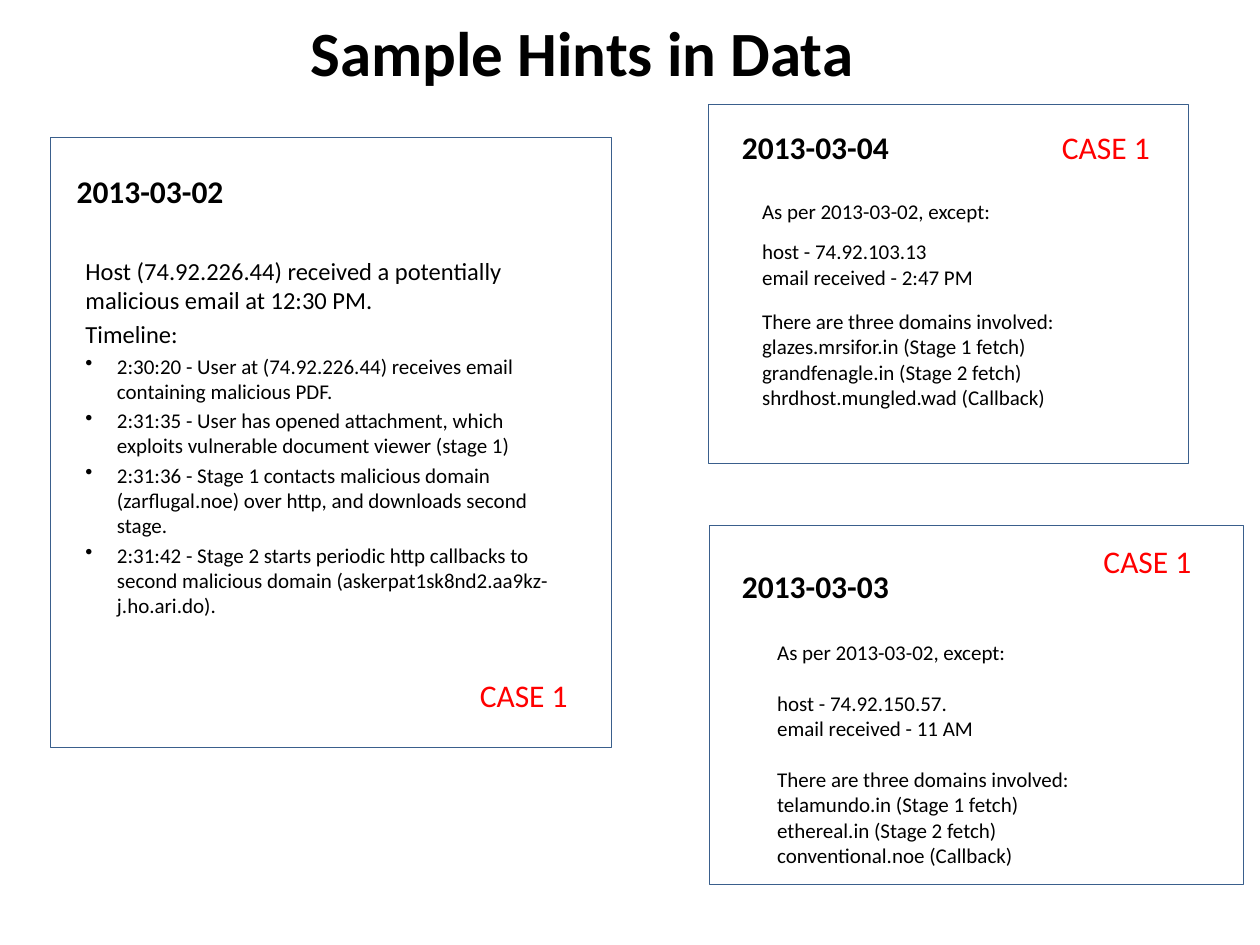
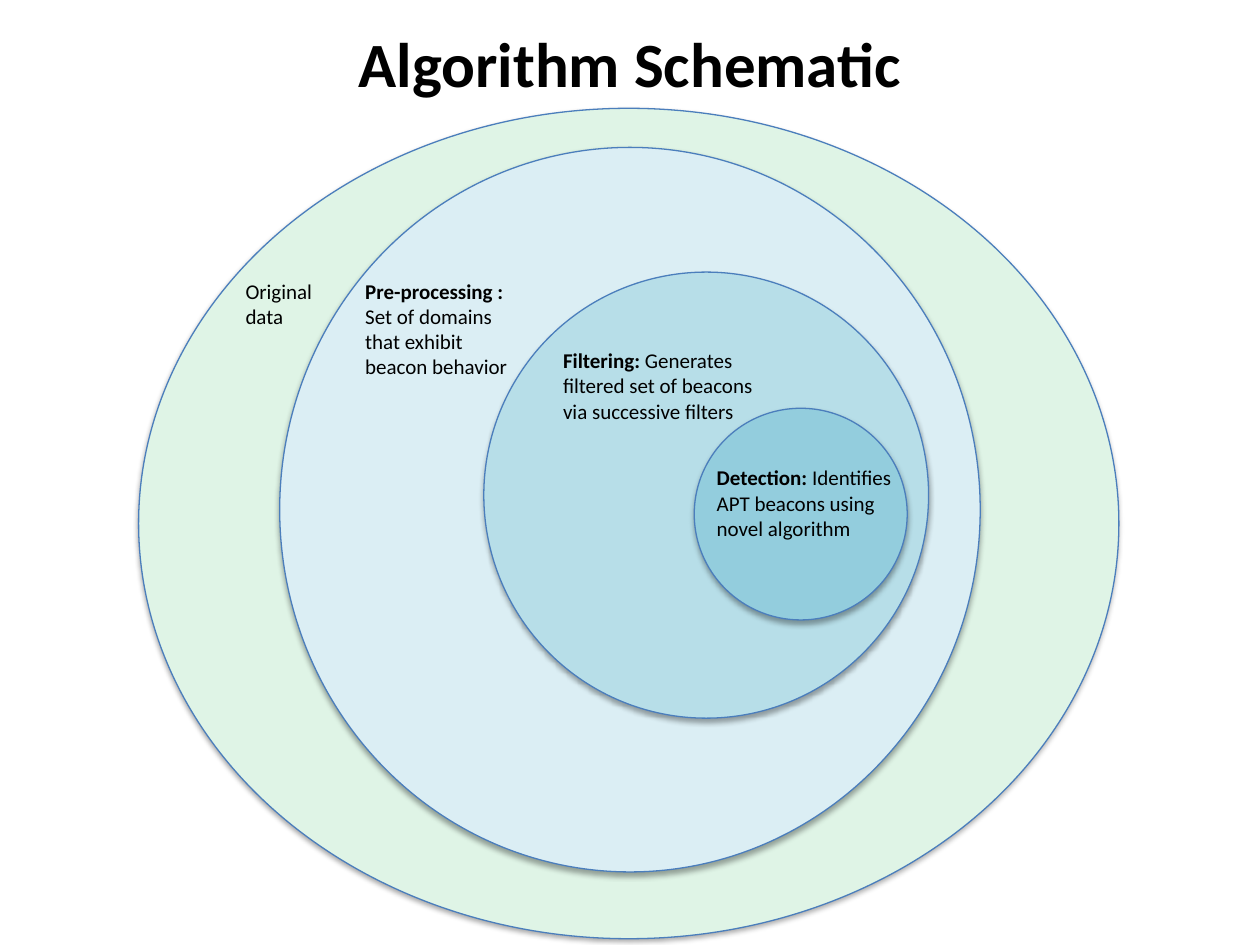
from dataclasses import dataclass

from lxml.etree import SubElement
from pptx import Presentation
from pptx.dml.color import RGBColor
from pptx.enum.shapes import MSO_SHAPE
from pptx.enum.text import MSO_ANCHOR, PP_ALIGN
from pptx.oxml.ns import qn
from pptx.util import Inches, Pt


@dataclass(frozen=True)
class Theme:
    font: str = "Calibri"
    text: RGBColor = RGBColor(0, 0, 0)
    case: RGBColor = RGBColor(255, 0, 0)
    card_line: RGBColor = RGBColor.from_string("3A5F8C")
    ring_line: RGBColor = RGBColor.from_string("4B7EBC")
    title_size: int = 36
    heading_size: int = 18
    lead_size: int = 14
    body_size: int = 12


theme = Theme()
presentation = Presentation()
presentation.slide_width = Inches(10)
presentation.slide_height = Inches(7.5)
column = presentation.slide_width / 100
row = presentation.slide_height / 75


def place(left, top, width, height):
    """Turn grid columns and rows into slide lengths."""
    return (round(left * column), round(top * row),
            round(width * column), round(height * row))


def write(text_frame, lines, size, color=theme.text, bold=False):
    text_frame.word_wrap = True
    text_frame.text = "\n".join(lines)
    for paragraph in text_frame.paragraphs:
        for run in paragraph.runs:
            run.font.name = theme.font
            run.font.size = Pt(size)
            run.font.bold = bold
            run.font.color.rgb = color
    return text_frame.paragraphs


# Titled slides
slides = []
for title_text, title_box in [
    ("Sample Hints in Data", (5.1, 0, 82.2, 8.1)),
    ("Algorithm Schematic", (5, 0.7, 90, 8.5)),
]:
    slide = presentation.slides.add_slide(presentation.slide_layouts[5])
    title = slide.shapes.title
    title.left, title.top, title.width, title.height = place(*title_box)
    title.text_frame.vertical_anchor = MSO_ANCHOR.MIDDLE
    paragraphs = write(title.text_frame, [title_text], theme.title_size, bold=True)
    paragraphs[0].alignment = PP_ALIGN.CENTER
    slides.append(slide)
hints, schematic = slides

# Case cards: date, frame, date corner, case label corner
cards = [
    ("2013-03-02", (4, 10.9, 44.5, 48.4), (5.1, 13.2), (37.1, 53.2)),
    ("2013-03-03", (56.3, 41.7, 42.4, 28.5), (57.9, 44.5), (86.6, 42.5)),
    ("2013-03-04", (56.2, 8.3, 38.1, 28.5), (57.9, 9.7), (83.3, 9.7)),
]
for date, frame_box, date_corner, case_corner in cards:
    frame = hints.shapes.add_shape(MSO_SHAPE.RECTANGLE, *place(*frame_box))
    frame.shadow.inherit = False
    frame.fill.background()
    frame.line.color.rgb = theme.card_line
    frame.line.width = Pt(0.25)
    date_label = hints.shapes.add_textbox(*place(*date_corner, 21.4, 4))
    write(date_label.text_frame, [date], theme.heading_size, bold=True)
    case_label = hints.shapes.add_textbox(*place(*case_corner, 10, 4))
    write(case_label.text_frame, ["CASE 1"], theme.heading_size, theme.case)

# Timeline of the first case
lead_lines = [
    "Host (74.92.226.44) received a potentially malicious email at 12:30 PM.",
    "Timeline:",
]
events = [
    "2:30:20 - User at (74.92.226.44) receives email containing malicious PDF.",
    "2:31:35 - User has opened attachment, which exploits vulnerable document viewer (stage 1)",
    "2:31:36 - Stage 1 contacts malicious domain (zarflugal.noe) over http, "
    "and downloads second stage.",
    "2:31:42 - Stage 2 starts periodic http callbacks to second malicious domain "
    "(askerpat1sk8nd2.aa9kz-j.ho.ari.do).",
]
timeline = hints.shapes.add_textbox(*place(5.8, 19.8, 39.5, 32.5))
paragraphs = write(timeline.text_frame, lead_lines + events, theme.lead_size)
for paragraph in paragraphs[1:]:
    paragraph.space_before = Pt(2.8)
for paragraph in paragraphs[len(lead_lines):]:
    paragraph.space_before = Pt(2.4)
    paragraph.runs[0].font.size = Pt(theme.body_size)
    properties = paragraph._p.get_or_add_pPr()
    properties.set("marL", str(Inches(0.25)))
    properties.set("indent", str(-Inches(0.25)))
    SubElement(properties, qn("a:buChar"), char="•")

# Differences in the later cases: box, gaps before host and domains, details
differences = [
    ((60.7, 50.3, 29.7, 19.2), (14.6, 14.6), "74.92.150.57.", "11 AM",
     ("telamundo.in", "ethereal.in", "conventional.noe")),
    ((59.5, 15.3, 26.9, 18.4), (8.5, 11), "74.92.103.13", "2:47 PM",
     ("glazes.mrsifor.in", "grandfenagle.in", "shrdhost.mungled.wad")),
]
roles = ("Stage 1 fetch", "Stage 2 fetch", "Callback")
for box, (host_gap, domains_gap), host, time, domains in differences:
    details = hints.shapes.add_textbox(*place(*box))
    paragraphs = write(details.text_frame, [
        "As per 2013-03-02, except:",
        f"host - {host}",
        f"email received - {time}",
        "There are three domains involved:",
        *(f"{domain} ({role})" for domain, role in zip(domains, roles)),
    ], theme.body_size)
    paragraphs[1].space_before = Pt(host_gap)
    paragraphs[3].space_before = Pt(domains_gap)

# Nested sets, from the widest to the narrowest
rings = [
    ("DFF4E6", (11, 8.6, 77.8, 65.9)),
    ("DBEEF4", (22.2, 11.7, 55.6, 57.5)),
    ("B7DEE8", (38.4, 21.6, 35.3, 35.4)),
    ("93CDDD", (55.1, 32.4, 16.9, 16.8)),
]
for color, box in rings:
    ring = schematic.shapes.add_shape(MSO_SHAPE.OVAL, *place(*box))
    ring.fill.solid()
    ring.fill.fore_color.rgb = RGBColor.from_string(color)
    ring.line.color.rgb = theme.ring_line
    ring.line.width = Pt(0.75)
    ring.shadow.inherit = False
    effects = ring._element.spPr.find(qn("a:effectLst"))
    shadow = SubElement(effects, qn("a:outerShdw"), blurRad=str(Pt(3.1)),
                        dist=str(Pt(1.8)), dir="5400000", rotWithShape="0")
    shadow_color = SubElement(shadow, qn("a:srgbClr"), val="000000")
    SubElement(shadow_color, qn("a:alpha"), val="35000")

# Set labels: box, bold lead, lines
labels = [
    ((18.5, 21.6, 7.5, 5), "", ["Original", "data"]),
    ((28, 21.6, 14.5, 9.1), "Pre-processing :",
     [" Set of domains that exhibit beacon behavior"]),
    ((43.7, 27.1, 17.5, 7.1), "Filtering: ",
     ["Generates filtered set of beacons via successive filters"]),
    ((55.9, 36.4, 16, 7.1), "Detection: ",
     ["Identifies APT beacons using novel algorithm"]),
]
for box, lead, lines in labels:
    label = schematic.shapes.add_textbox(*place(*box))
    if not lead:
        write(label.text_frame, lines, theme.body_size)
        continue
    paragraph = write(label.text_frame, [lead], theme.body_size, bold=True)[0]
    run = paragraph.add_run()
    run.text = lines[0]
    run.font.name = theme.font
    run.font.size = Pt(theme.body_size)
    run.font.color.rgb = theme.text

presentation.save("out.pptx")
